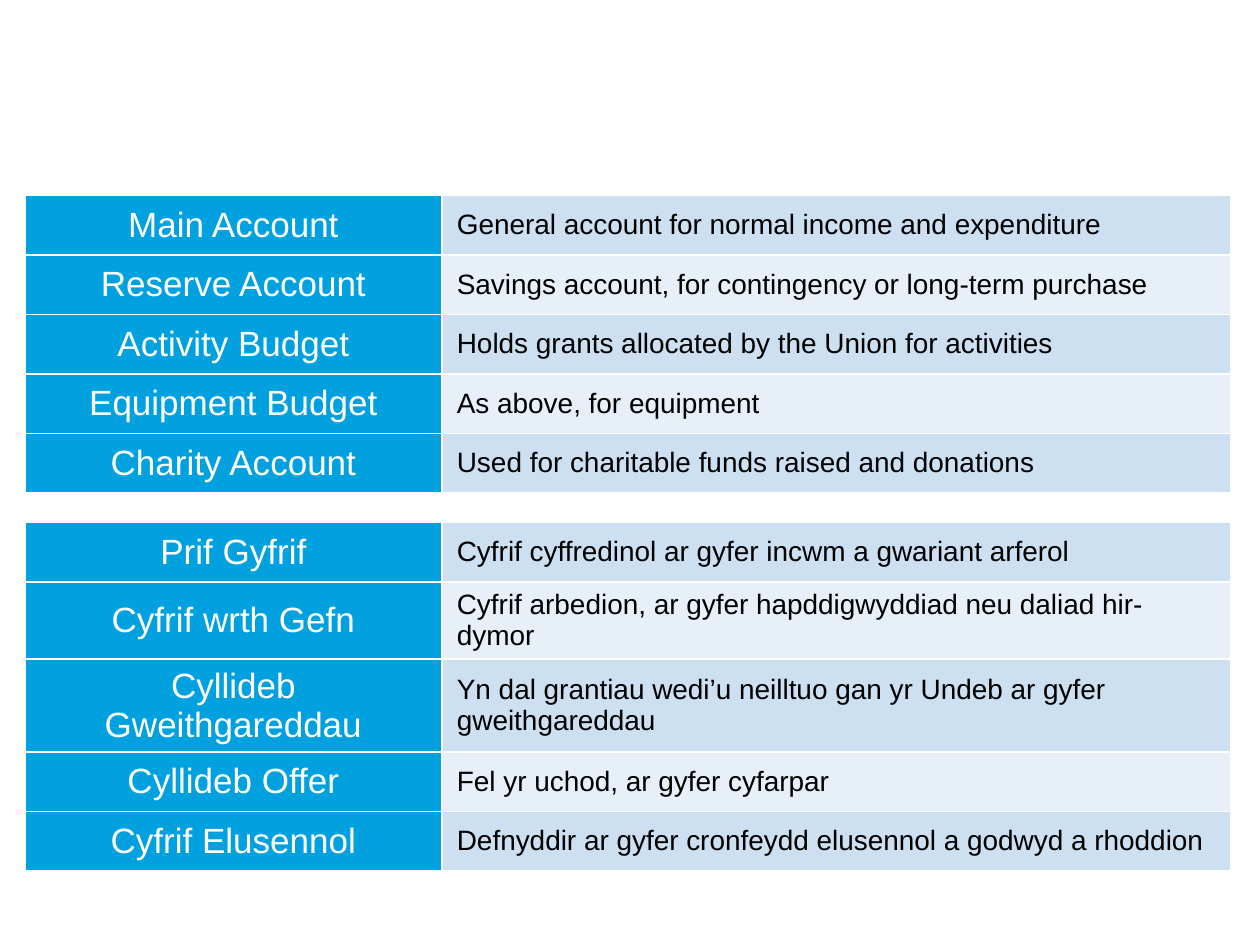
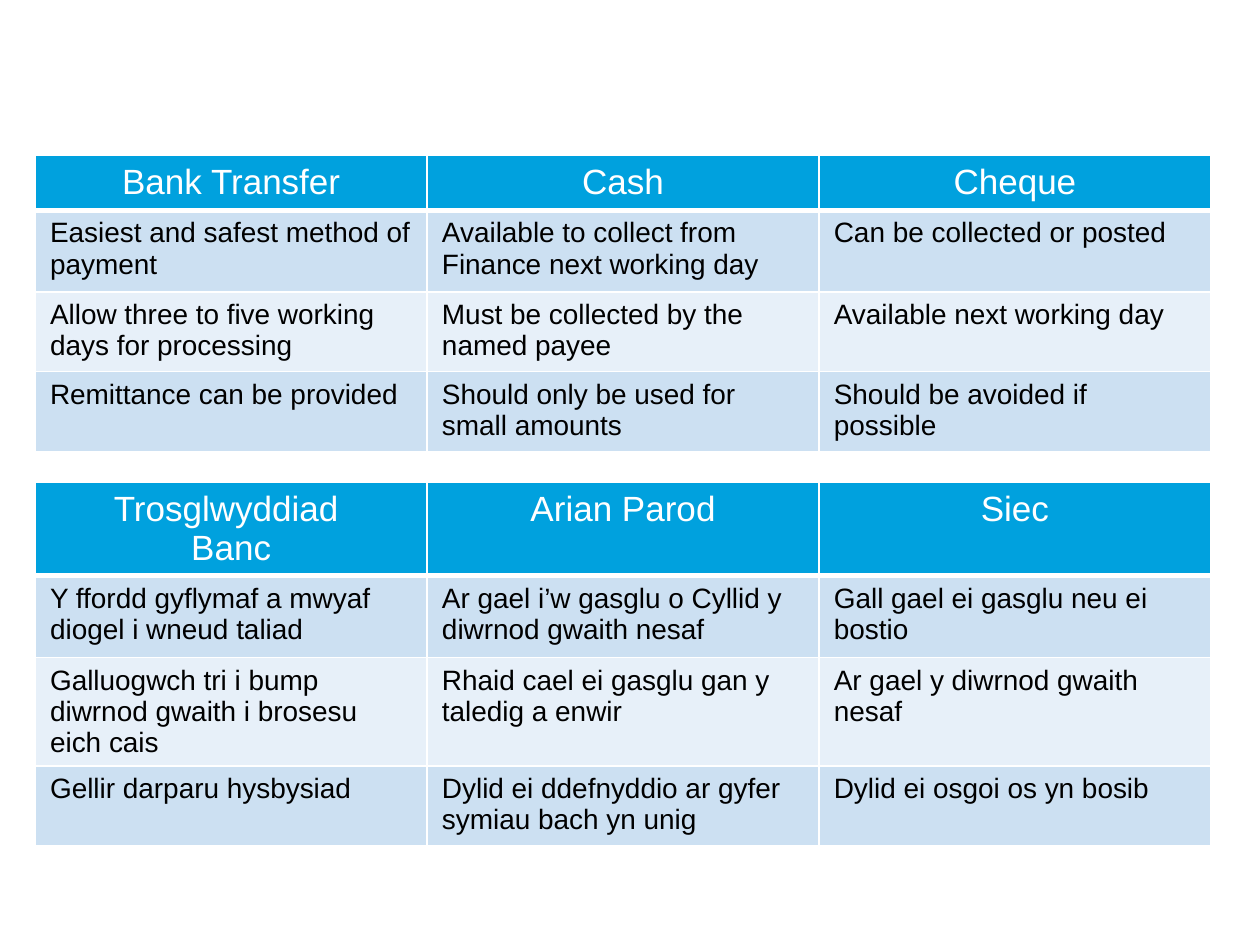
from dataclasses import dataclass

import lxml.etree
import pptx
import pptx.dml.color
import pptx.enum.text
import pptx.oxml.ns
import pptx.slide
import pptx.table
import pptx.util

Cm = pptx.util.Cm

COLORS = {
    "heading": "00A1DE",
    "band_dark": "CCE0F2",
    "band_light": "E7F0F9",
    "white": "FFFFFF",
    "black": "000000",
}
FONT_NAME = "Arial"
HEADING_SIZE = 20
BODY_SIZE = 16
THIN_BORDER = 1
THICK_BORDER = 3


@dataclass(frozen=True)
class TableLayout:
    left: float
    column_widths: tuple[float, ...]
    row_heights: tuple[float, ...]
    headings_on_top: bool

    def is_heading(self, row: int, column: int) -> bool:
        return (row if self.headings_on_top else column) == 0

    def body_fill(self, row: int) -> str:
        body_row = row - 1 if self.headings_on_top else row
        return "band_light" if body_row % 2 else "band_dark"


@dataclass(frozen=True)
class TableContent:
    top: float
    rows: tuple[tuple[str, ...], ...]


ACCOUNT_LAYOUT = TableLayout(0.5, (8.41, 15.9), (1.2,) * 5, headings_on_top=False)
PAYMENT_LAYOUT = TableLayout(0.71, (7.9,) * 3, (1.11, 1.65, 1.6, 1.62), headings_on_top=True)

ACCOUNTS_ENGLISH = TableContent(3.94, (
    ("Main Account", "General account for normal income and expenditure"),
    ("Reserve Account", "Savings account, for contingency or long-term purchase"),
    ("Activity Budget", "Holds grants allocated by the Union for activities"),
    ("Equipment Budget", "As above, for equipment"),
    ("Charity Account", "Used for charitable funds raised and donations"),
))
ACCOUNTS_WELSH = TableContent(10.53, (
    ("Prif Gyfrif", "Cyfrif cyffredinol ar gyfer incwm a gwariant arferol"),
    ("Cyfrif wrth Gefn", "Cyfrif arbedion, ar gyfer hapddigwyddiad neu daliad hir-dymor"),
    ("Cyllideb Gweithgareddau",
     "Yn dal grantiau wedi’u neilltuo gan yr Undeb ar gyfer gweithgareddau"),
    ("Cyllideb Offer", "Fel yr uchod, ar gyfer cyfarpar"),
    ("Cyfrif Elusennol", "Defnyddir ar gyfer cronfeydd elusennol a godwyd a rhoddion"),
))
PAYMENTS_ENGLISH = TableContent(3.13, (
    ("Bank Transfer", "Cash", "Cheque"),
    ("Easiest and safest method of payment",
     "Available to collect from Finance next working day",
     "Can be collected or posted"),
    ("Allow three to five working days for processing",
     "Must be collected by the named payee",
     "Available next working day"),
    ("Remittance can be provided",
     "Should only be used for small amounts",
     "Should be avoided if possible"),
))
PAYMENTS_WELSH = TableContent(9.73, (
    ("Trosglwyddiad \vBanc", "Arian Parod", "Siec"),
    ("Y ffordd gyflymaf a mwyaf diogel i wneud taliad",
     "Ar gael i’w gasglu o Cyllid y diwrnod gwaith nesaf",
     "Gall gael ei gasglu neu ei bostio"),
    ("Galluogwch tri i bump diwrnod gwaith i brosesu eich cais",
     "Rhaid cael ei gasglu gan y taledig a enwir",
     "Ar gael y diwrnod gwaith nesaf"),
    ("Gellir darparu hysbysiad",
     "Dylid ei ddefnyddio ar gyfer symiau bach yn unig",
     "Dylid ei osgoi os yn bosib"),
))
SLIDES = (
    (ACCOUNT_LAYOUT, (ACCOUNTS_ENGLISH, ACCOUNTS_WELSH)),
    (PAYMENT_LAYOUT, (PAYMENTS_ENGLISH, PAYMENTS_WELSH)),
)


def rgb(color: str) -> pptx.dml.color.RGBColor:
    return pptx.dml.color.RGBColor.from_string(COLORS[color])


def add_borders(cell: pptx.table._Cell, bottom_width: float) -> None:
    qn = pptx.oxml.ns.qn
    properties = cell._tc.get_or_add_tcPr()
    for side in "LRTB":
        width = bottom_width if side == "B" else THIN_BORDER
        line = lxml.etree.SubElement(
            properties, qn(f"a:ln{side}"), w=str(pptx.util.Pt(width)))
        fill = lxml.etree.SubElement(line, qn("a:solidFill"))
        lxml.etree.SubElement(fill, qn("a:srgbClr"), val=COLORS["white"])


def format_cell(cell: pptx.table._Cell, text: str, heading: bool,
                fill: str, layout: TableLayout) -> None:
    thick_bottom = heading and layout.headings_on_top
    add_borders(cell, THICK_BORDER if thick_bottom else THIN_BORDER)
    cell.fill.solid()
    cell.fill.fore_color.rgb = rgb(fill)
    cell.margin_left = cell.margin_right = Cm(0.3)
    cell.margin_top = cell.margin_bottom = Cm(0.15)
    anchors = pptx.enum.text.MSO_ANCHOR
    cell.vertical_anchor = anchors.TOP if layout.headings_on_top else anchors.MIDDLE
    cell.text_frame.text = text
    paragraph = cell.text_frame.paragraphs[0]
    alignments = pptx.enum.text.PP_ALIGN
    paragraph.alignment = alignments.CENTER if heading else alignments.LEFT
    for run in paragraph.runs:
        run.font.name = FONT_NAME
        run.font.size = pptx.util.Pt(HEADING_SIZE if heading else BODY_SIZE)
        run.font.bold = False
        run.font.color.rgb = rgb("white" if heading else "black")


def add_table(slide: pptx.slide.Slide, layout: TableLayout, content: TableContent) -> None:
    table = slide.shapes.add_table(
        len(layout.row_heights), len(layout.column_widths),
        Cm(layout.left), Cm(content.top),
        Cm(sum(layout.column_widths)), Cm(sum(layout.row_heights)),
    ).table
    table.first_row = layout.headings_on_top
    table.first_col = not layout.headings_on_top
    for column, width in zip(table.columns, layout.column_widths):
        column.width = Cm(width)
    for row, height in zip(table.rows, layout.row_heights):
        row.height = Cm(height)
    for row_index, texts in enumerate(content.rows):
        for column_index, text in enumerate(texts):
            heading = layout.is_heading(row_index, column_index)
            fill = "heading" if heading else layout.body_fill(row_index)
            format_cell(table.cell(row_index, column_index), text, heading, fill, layout)


def main() -> None:
    presentation = pptx.Presentation()
    presentation.slide_width = Cm(25.4)
    presentation.slide_height = Cm(19.05)
    for layout, contents in SLIDES:
        slide = presentation.slides.add_slide(presentation.slide_layouts[6])
        for content in contents:
            add_table(slide, layout, content)
    presentation.save("out.pptx")


if __name__ == "__main__":
    main()
